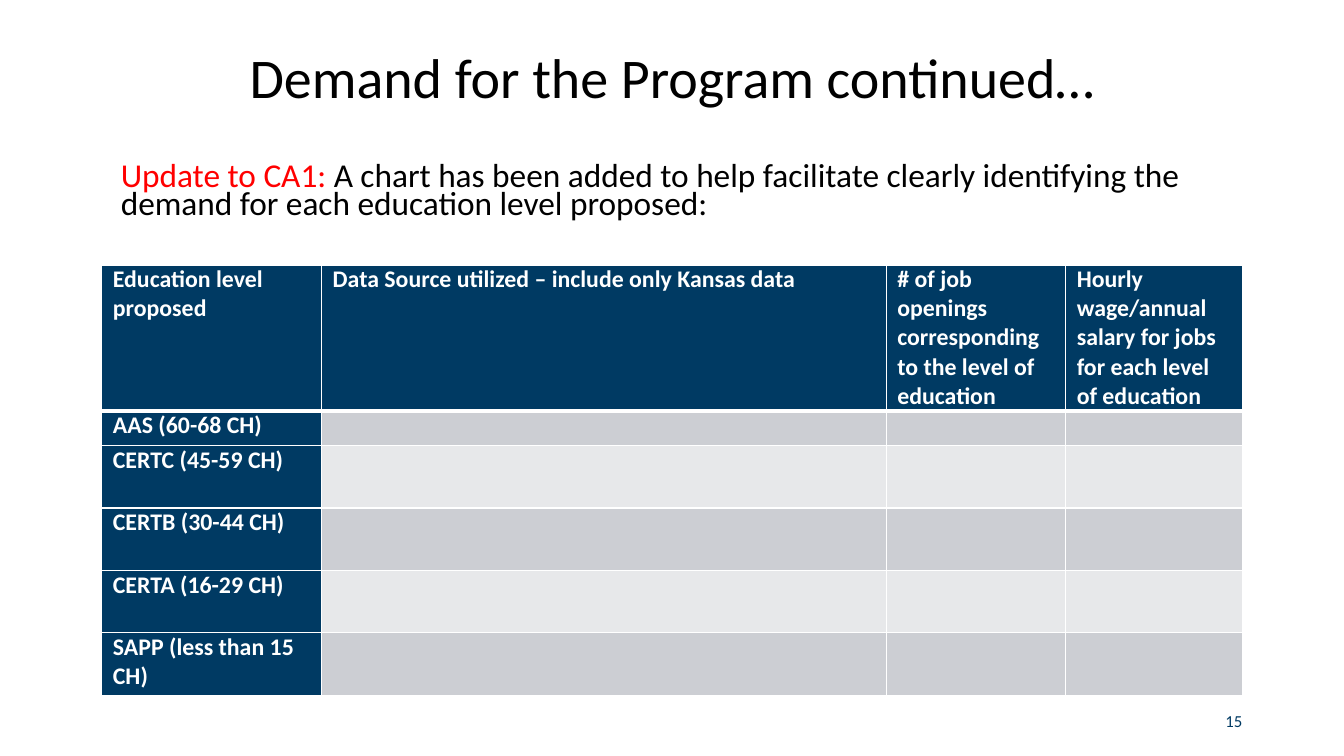
from lxml.etree import SubElement
from pptx import Presentation
from pptx.dml.color import RGBColor
from pptx.enum.text import MSO_ANCHOR as Anchor, PP_ALIGN as Align
from pptx.oxml.ns import qn
from pptx.util import Inches, Pt

THEME = {
    "font": "Calibri",
    "navy": "003A63", "black": "000000", "red": "FF0000", "white": "FFFFFF",
    "bands": ("CCCED3", "E7E8EA"),
    "title": 40, "body": 23.8, "table": 17, "number": 12,
}

TITLE = "Demand for the Program continued…"
INTRO = [
    ("Update to CA1: ", "red"),
    ("A chart has been added to help facilitate clearly identifying the "
     "demand for each education level proposed:", "black"),
]
PAGE_NUMBER = "15"
HEADERS = [
    "Education level proposed",
    "Data Source utilized – include only Kansas data",
    "# of job openings corresponding to the level of education",
    "Hourly wage/annual salary for jobs for each level of education",
]
LEVELS = [
    "AAS (60-68 CH)",
    "CERTC (45-59 CH)",
    "CERTB (30-44 CH)",
    "CERTA (16-29 CH)",
    "SAPP (less than 15 CH)",
]
COLUMN_WIDTHS = [2.18, 5.6, 1.78, 1.75]
ROW_HEIGHTS = [1.45, 0.34] + [0.62] * 4


def add_run(paragraph, text, size, color, bold=False):
    run = paragraph.add_run()
    run.text = text
    run.font.name = THEME["font"]
    run.font.size = Pt(THEME[size])
    run.font.bold = bold
    run.font.color.rgb = RGBColor.from_string(THEME[color])


def add_text(slide, box, runs, size, align, spacing=1.0, bottom=0.05):
    shape = slide.shapes.add_textbox(*map(Inches, box))
    frame = shape.text_frame
    frame.word_wrap = True
    frame.vertical_anchor = Anchor.MIDDLE
    frame.margin_bottom = Inches(bottom)
    paragraph = frame.paragraphs[0]
    paragraph.alignment = align
    paragraph.line_spacing = spacing
    for text, color in runs:
        add_run(paragraph, text, size, color)


def add_borders(cell, top, bottom):
    properties = cell._tc.get_or_add_tcPr()
    sides = [("a:lnL", 1), ("a:lnR", 1), ("a:lnT", top), ("a:lnB", bottom)]
    for position, (side, width) in enumerate(sides):
        line = SubElement(properties, qn(side), w=str(Pt(width)))
        fill = SubElement(line, qn("a:solidFill"))
        SubElement(fill, qn("a:srgbClr"), val=THEME["white"])
        properties.insert(position, line)


def add_demand_table(slide):
    rows = [HEADERS] + [[level, "", "", ""] for level in LEVELS]
    table = slide.shapes.add_table(
        len(rows), len(HEADERS), Inches(1.01), Inches(2.63),
        Inches(sum(COLUMN_WIDTHS)), Inches(sum(ROW_HEIGHTS))).table
    for column, width in zip(table.columns, COLUMN_WIDTHS):
        column.width = Inches(width)
    for row, height in zip(table.rows, ROW_HEIGHTS):
        row.height = Inches(height)
    for row_index, texts in enumerate(rows):
        for column_index, text in enumerate(texts):
            cell = table.cell(row_index, column_index)
            cell.margin_left = cell.margin_right = Inches(0.11)
            cell.margin_top = cell.margin_bottom = 0
            band = THEME["bands"][(row_index - 1) % 2]
            cell.fill.solid()
            cell.fill.fore_color.rgb = RGBColor.from_string(
                THEME["navy"] if text else band)
            add_borders(cell, 3 if row_index == 1 else 1,
                        3 if row_index == 0 else 1)
            if text:
                add_run(cell.text_frame.paragraphs[0], text, "table", "white", True)


def main():
    presentation = Presentation()
    presentation.slide_width = Inches(13.33)
    presentation.slide_height = Inches(7.5)
    slide = presentation.slides.add_slide(presentation.slide_layouts[6])
    add_text(slide, (1.1, 0.19, 11.13, 1.22), [(TITLE, "black")],
             "title", Align.CENTER, 0.9)
    add_text(slide, (1.1, 1.74, 11.13, 0.7), INTRO,
             "body", Align.LEFT, 0.7, bottom=0.39)
    add_text(slide, (9.42, 6.95, 3, 0.4), [(PAGE_NUMBER, "navy")],
             "number", Align.RIGHT)
    add_demand_table(slide)
    presentation.save("out.pptx")


if __name__ == "__main__":
    main()
